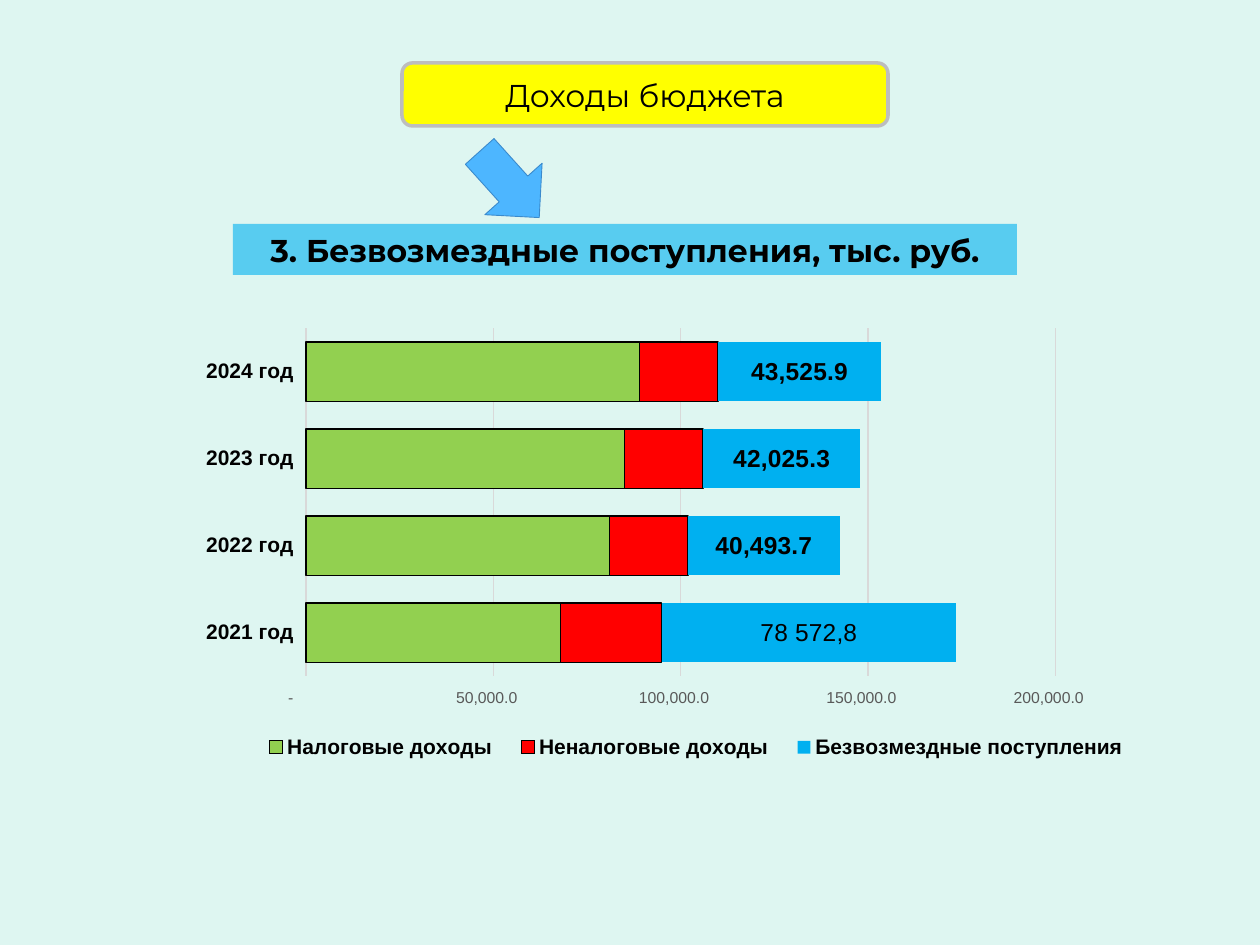
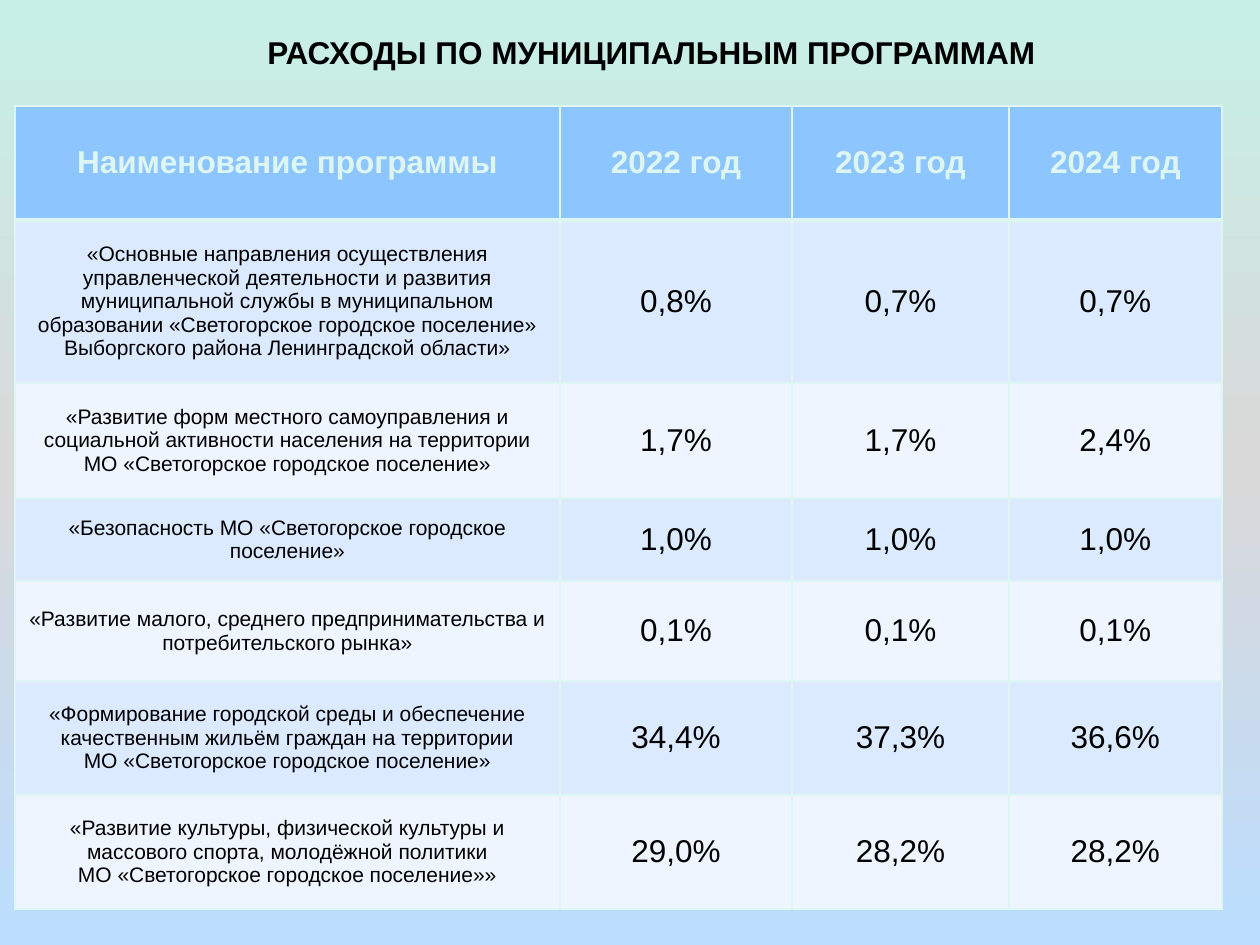
from copy import deepcopy
from typing import NamedTuple, Optional

from lxml import etree
from pptx import Presentation
from pptx.chart.data import CategoryChartData
from pptx.dml.color import RGBColor
from pptx.enum.chart import XL_CHART_TYPE, XL_LABEL_POSITION, XL_LEGEND_POSITION, XL_TICK_MARK
from pptx.enum.shapes import MSO_SHAPE
from pptx.enum.text import MSO_ANCHOR, PP_ALIGN
from pptx.oxml.ns import qn
from pptx.util import Pt

EMU_PER_PX = 914400 / 126
SLIDE_WIDTH, SLIDE_HEIGHT = 1260, 945

BODY_FONT, DISPLAY_FONT = "Arial", "Montserrat"
BLACK = RGBColor(0x00, 0x00, 0x00)
MINT = RGBColor(0xDE, 0xF6, 0xF1)
YELLOW = RGBColor(0xFF, 0xFF, 0x00)
SILVER = RGBColor(0xBD, 0xBD, 0xBD)
GRID_GRAY = RGBColor(0xD9, 0xD9, 0xD9)
TICK_GRAY = RGBColor(0x59, 0x59, 0x59)
ARROW_BLUE = RGBColor(0x4D, 0xB6, 0xFF)
ARROW_EDGE = RGBColor(0x3A, 0x8A, 0xCC)
GREEN = RGBColor(0x92, 0xD0, 0x50)
RED = RGBColor(0xFF, 0x00, 0x00)
SKY = RGBColor(0x00, 0xB0, 0xF0)
HEADER_BLUE = RGBColor(0x8D, 0xC6, 0xFF)
BAND_COLORS = (RGBColor(0xDB, 0xEA, 0xFF), RGBColor(0xEE, 0xF5, 0xFF))
GRADIENT = ((0, RGBColor(0xC6, 0xF0, 0xE7)), (0.5, GRID_GRAY),
            (1, RGBColor(0xBB, 0xDD, 0xFF)))

CENTER, MIDDLE = PP_ALIGN.CENTER, MSO_ANCHOR.MIDDLE
ROUNDED, RECTANGLE, DOWN_ARROW = (
    MSO_SHAPE.ROUNDED_RECTANGLE, MSO_SHAPE.RECTANGLE, MSO_SHAPE.DOWN_ARROW)
STACKED_BARS = XL_CHART_TYPE.BAR_STACKED
LABEL_CENTER = XL_LABEL_POSITION.CENTER
LEGEND_BOTTOM = XL_LEGEND_POSITION.BOTTOM
TICK_OUTSIDE = XL_TICK_MARK.OUTSIDE
AXIS_FORMAT = '_-* #,##0.0_р_._-;\\-* #,##0.0_р_._-;_-* "-"??_р_._-;_-@_-'


class Box(NamedTuple):
    left: int
    top: int
    width: int
    height: int

    def emu(self) -> tuple:
        return tuple(px(length) for length in self)


class TextStyle(NamedTuple):
    size: int
    bold: bool = False
    color: RGBColor = BLACK
    name: str = BODY_FONT


class Block(NamedTuple):
    preset: int
    box: Box
    fill: RGBColor
    line: Optional[RGBColor] = None
    line_width: float = 2
    text: str = ""
    style: TextStyle = TextStyle(18, name=DISPLAY_FONT)
    rotation: int = 0
    opacity: int = 100


class IncomeSeries(NamedTuple):
    name: str
    values: tuple
    color: RGBColor
    outlined: bool = True


class Program(NamedTuple):
    name: str
    shares: tuple
    height: int


BLOCKS = (
    Block(ROUNDED, Box(402, 63, 486, 63), YELLOW, SILVER, text="Доходы бюджета"),
    Block(DOWN_ARROW, Box(471, 140, 77, 89), ARROW_BLUE, ARROW_EDGE, 0.5, rotation=318),
    Block(RECTANGLE, Box(233, 224, 784, 51), SKY,
          text="3. Безвозмездные поступления, тыс. руб.",
          style=TextStyle(18, True, name=DISPLAY_FONT), opacity=60),
)

YEARS = ("2021 год", "2022 год", "2023 год", "2024 год")
INCOME = (
    IncomeSeries("Налоговые доходы", (68000, 81000, 85000, 89000), GREEN),
    IncomeSeries("Неналоговые доходы", (27000, 21000, 21000, 21000), RED),
    IncomeSeries("Безвозмездные поступления", (78572.7, 40493.7, 42025.3, 43525.9), SKY, False),
)

COLUMN_WIDTHS = (545, 232, 217, 213)
HEADER_HEIGHT = 114
PROGRAMS = (
    Program("«Основные направления осуществления управленческой деятельности и развития "
            "муниципальной службы в муниципальном образовании «Светогорское городское "
            "поселение» Выборгского района Ленинградской области»",
            ("0,8%", "0,7%", "0,7%"), 163),
    Program("«Развитие форм местного самоуправления и социальной активности населения "
            "на территории\vМО «Светогорское городское поселение»",
            ("1,7%", "1,7%", "2,4%"), 115),
    Program("«Безопасность МО «Светогорское городское поселение»",
            ("1,0%", "1,0%", "1,0%"), 83),
    Program("«Развитие малого, среднего предпринимательства и потребительского рынка»",
            ("0,1%", "0,1%", "0,1%"), 100),
    Program("«Формирование городской среды и обеспечение качественным жильём граждан "
            "на территории\vМО «Светогорское городское поселение»",
            ("34,4%", "37,3%", "36,6%"), 114),
    Program("«Развитие культуры, физической культуры и массового спорта, молодёжной "
            "политики\vМО «Светогорское городское поселение»»",
            ("29,0%", "28,2%", "28,2%"), 114),
)


def px(length: int) -> int:
    return round(length * EMU_PER_PX)


def style_font(font, style: TextStyle) -> None:
    font.name = style.name
    font.size = Pt(style.size)
    font.bold = style.bold
    font.color.rgb = style.color


def write_centered(text_frame, text: str, style: TextStyle) -> None:
    text_frame.text = text
    text_frame.word_wrap = True
    text_frame.vertical_anchor = MIDDLE
    paragraph = text_frame.paragraphs[0]
    paragraph.alignment = CENTER
    for run in paragraph.runs:
        style_font(run.font, style)


def draw_block(slide, block: Block) -> None:
    shape = slide.shapes.add_shape(block.preset, *block.box.emu())
    shape.shadow.inherit = False
    shape.rotation = block.rotation
    shape.fill.solid()
    shape.fill.fore_color.rgb = block.fill
    if block.opacity < 100:
        color = shape.fill._xPr.find(qn("a:solidFill"))[0]
        etree.SubElement(color, qn("a:alpha"), val=str(block.opacity * 1000))
    if block.line is None:
        shape.line.fill.background()
    else:
        shape.line.color.rgb = block.line
        shape.line.width = Pt(block.line_width)
    if block.text:
        write_centered(shape.text_frame, block.text, block.style)


def set_layout(element, following: str, inner: bool = False, **fractions: float) -> None:
    """Place a chart part by fractions of the chart area, before the named child."""
    for old in element.findall(qn("c:layout")):
        element.remove(old)
    layout = etree.Element(qn("c:layout"))
    manual = etree.SubElement(layout, qn("c:manualLayout"))
    if inner:
        etree.SubElement(manual, qn("c:layoutTarget"), val="inner")
    for mode in ("xMode", "yMode"):
        etree.SubElement(manual, qn(f"c:{mode}"), val="edge")
    for name, fraction in fractions.items():
        etree.SubElement(manual, qn(f"c:{name}"), val=str(fraction))
    element.find(qn(f"c:{following}")).addprevious(layout)


def style_axes(chart) -> None:
    styles = ((chart.category_axis, TextStyle(12, True)),
              (chart.value_axis, TextStyle(9, color=TICK_GRAY)))
    for axis, style in styles:
        axis.major_tick_mark = TICK_OUTSIDE
        axis.format.line.fill.background()
        style_font(axis.tick_labels.font, style)
    value_axis = chart.value_axis
    value_axis.minimum_scale, value_axis.maximum_scale = 0, 200000
    value_axis.major_unit = 50000
    value_axis.tick_labels.number_format = AXIS_FORMAT
    value_axis.tick_labels.number_format_is_linked = False
    value_axis.major_gridlines.format.line.color.rgb = GRID_GRAY
    value_axis.major_gridlines.format.line.width = Pt(0.75)


def label_transfers(series) -> None:
    labels = series.data_labels
    labels.show_value = True
    labels.number_format = "#,##0.0"
    labels.number_format_is_linked = False
    labels.position = LABEL_CENTER
    style_font(labels.font, TextStyle(14, True))
    first_label = series.points[0].data_label
    write_text = first_label.text_frame
    write_text.text = "78 572,8"
    style_font(write_text.paragraphs[0].runs[0].font, TextStyle(14))
    first_label.position = LABEL_CENTER


def draw_income_chart(slide) -> None:
    data = CategoryChartData()
    data.categories = YEARS
    for income in INCOME:
        data.add_series(income.name, income.values)
    chart = slide.shapes.add_chart(STACKED_BARS, *Box(144, 275, 1032, 559).emu(), data).chart
    chart.has_title = False
    style_font(chart.font, TextStyle(10))
    style_axes(chart)
    plot = chart.plots[0]
    plot.gap_width, plot.overlap = 47, 100
    plot.vary_by_categories = False
    for series, income in zip(plot.series, INCOME):
        series.format.fill.solid()
        series.format.fill.fore_color.rgb = income.color
        if income.outlined:
            series.format.line.color.rgb = BLACK
            series.format.line.width = Pt(0.75)
        else:
            series.format.line.fill.background()
    label_transfers(plot.series[2])
    chart.has_legend = True
    chart.legend.position = LEGEND_BOTTOM
    chart.legend.include_in_layout = False
    style_font(chart.legend.font, TextStyle(12, True))
    set_layout(chart.legend._element, "overlay", x=0.1, y=0.81, w=0.87, h=0.07)
    plot_area = chart._chartSpace.find(".//" + qn("c:plotArea"))
    set_layout(plot_area, "barChart", True, x=0.157, y=0.095, w=0.726, h=0.623)


def fill_cell(cell, text: str, style: TextStyle, fill: RGBColor,
              top: int = 1, bottom: int = 1) -> None:
    """Write, border and fill a cell; top and bottom are border widths in points."""
    write_centered(cell.text_frame, text, style)
    cell.vertical_anchor = MIDDLE
    properties = cell._tc.get_or_add_tcPr()
    for side, width in (("L", 1), ("R", 1), ("T", top), ("B", bottom)):
        line = etree.SubElement(properties, qn(f"a:ln{side}"), w=str(Pt(width)))
        solid = etree.SubElement(line, qn("a:solidFill"))
        etree.SubElement(solid, qn("a:srgbClr"), val=str(MINT))
    cell.fill.solid()
    cell.fill.fore_color.rgb = fill


def draw_program_table(slide) -> None:
    heights = (HEADER_HEIGHT, *(program.height for program in PROGRAMS))
    box = Box(15, 106, sum(COLUMN_WIDTHS), sum(heights))
    table = slide.shapes.add_table(len(heights), len(COLUMN_WIDTHS), *box.emu()).table
    table.first_row = table.horz_banding = False
    for column, width in zip(table.columns, COLUMN_WIDTHS):
        column.width = px(width)
    for row, height in zip(table.rows, heights):
        row.height = px(height)
    for index, heading in enumerate(("Наименование программы", *YEARS[1:])):
        fill_cell(table.cell(0, index), heading, TextStyle(18, True, MINT), HEADER_BLUE, bottom=3)
    for row_index, program in enumerate(PROGRAMS, 1):
        band = BAND_COLORS[(row_index - 1) % 2]
        for index, text in enumerate((program.name, *program.shares)):
            fill_cell(table.cell(row_index, index), text, TextStyle(18 if index else 12),
                      band, top=3 if row_index == 1 else 1)


def paint_gradient(slide) -> None:
    fill = slide.background.fill
    fill.gradient()
    fill.gradient_angle = 270
    stop_list = slide._element.find(".//" + qn("a:gsLst"))
    stop_list.append(deepcopy(stop_list[-1]))
    for stop, (position, color) in zip(fill.gradient_stops, GRADIENT):
        stop.position = position
        stop.color.rgb = color


def build_income_slide(slide) -> None:
    slide.background.fill.solid()
    slide.background.fill.fore_color.rgb = MINT
    for block in BLOCKS:
        draw_block(slide, block)
    draw_income_chart(slide)


def build_program_slide(slide) -> None:
    paint_gradient(slide)
    title = slide.shapes.add_textbox(*Box(123, 27, 1057, 49).emu())
    write_centered(title.text_frame, "РАСХОДЫ ПО МУНИЦИПАЛЬНЫМ ПРОГРАММАМ", TextStyle(18, True))
    draw_program_table(slide)


def main() -> None:
    presentation = Presentation()
    presentation.slide_width, presentation.slide_height = px(SLIDE_WIDTH), px(SLIDE_HEIGHT)
    blank = presentation.slide_layouts[6]
    for build in (build_income_slide, build_program_slide):
        build(presentation.slides.add_slide(blank))
    presentation.save("out.pptx")


if __name__ == "__main__":
    main()
